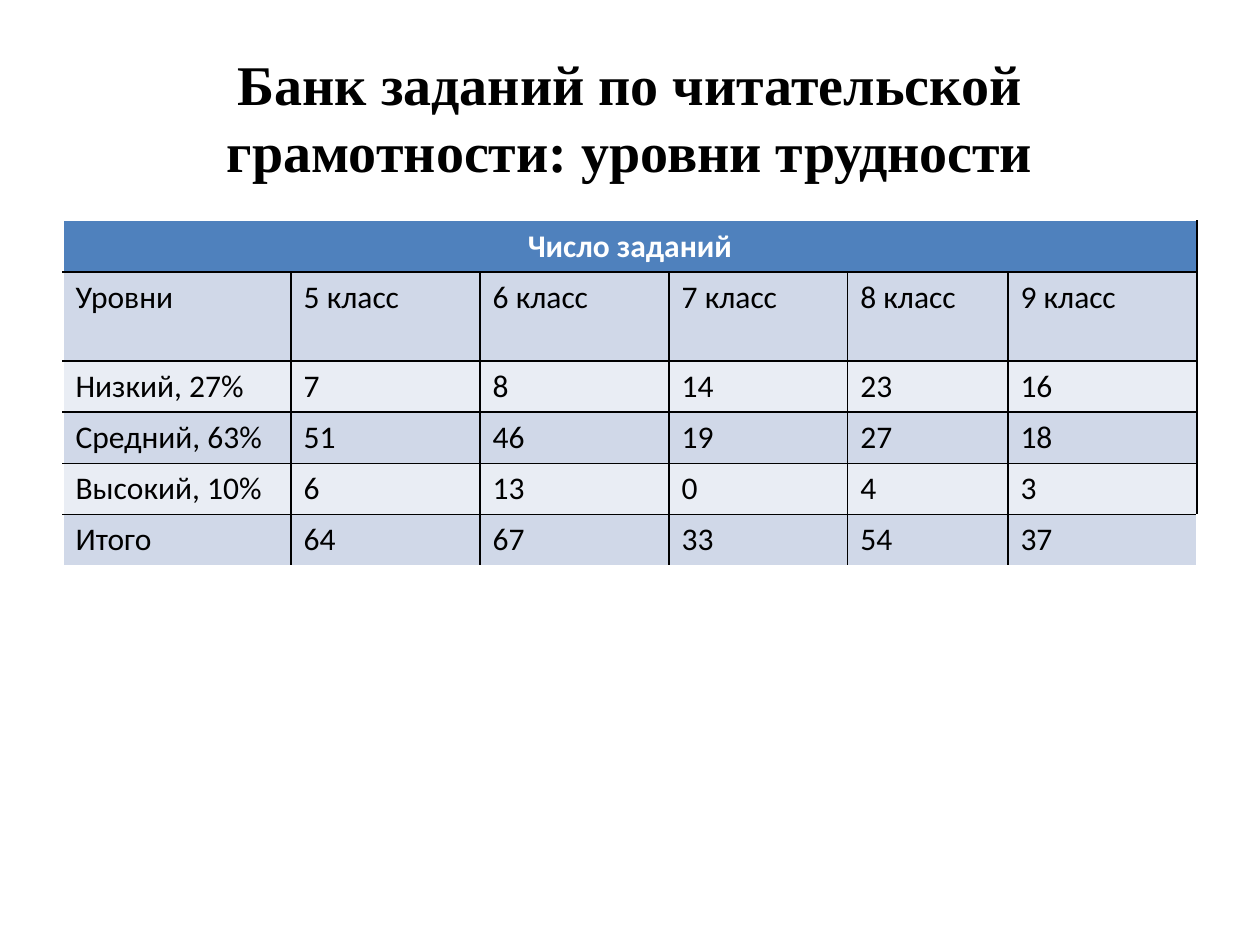
from lxml import etree
from pptx import Presentation, util as u
from pptx.dml.color import RGBColor
from pptx.enum import text
from pptx.oxml import ns

HUES = {"head": "4F81BD", "dark": "D0D8E8", "pale": "E9EDF4",
        "ink": "000000", "white": "FFFFFF"}
TITLE = "Банк заданий по читательской грамотности: уровни трудности"
ROWS = [
    ["Число заданий", "", "", "", "", ""],
    ["Уровни", "5 класс", "6 класс", "7 класс", "8 класс", "9 класс"],
    ["Низкий, 27%", "7", "8", "14", "23", "16"],
    ["Средний, 63%", "51", "46", "19", "27", "18"],
    ["Высокий, 10%", "6", "13", "0", "4", "3"],
    ["Итого", "64", "67", "33", "54", "37"],
]
WIDTHS = [4.6, 3.81, 3.81, 3.6, 3.23, 3.81]
HEIGHTS = [1.03, 1.8, 1.03, 1.03, 1.03, 1.03]


def hue(name):
    return RGBColor.from_string(HUES[name])


def style(par, face, size, ink, bold):
    for run in par.runs:
        run.font.name = face
        run.font.size = u.Pt(size)
        run.font.bold = bold
        run.font.color.rgb = hue(ink)


def edge(cell, side, ink):
    line = etree.SubElement(cell._tc.get_or_add_tcPr(), ns.qn("a:ln" + side),
                            w=str(u.Pt(1)))
    fill = etree.SubElement(line, ns.qn("a:solidFill"))
    etree.SubElement(fill, ns.qn("a:srgbClr"), val=HUES[ink])


def add_title(slide, left, top, wide, high):
    box = slide.shapes.title
    box.left, box.top, box.width, box.height = map(u.Cm, (left, top, wide, high))
    frame = box.text_frame
    frame.text = TITLE
    frame.vertical_anchor = text.MSO_ANCHOR.MIDDLE
    par = frame.paragraphs[0]
    par.alignment = text.PP_ALIGN.CENTER
    style(par, "Times New Roman", 32, "ink", True)


def add_grid(slide, left, top, wide, high):
    grid = slide.shapes.add_table(len(ROWS), len(WIDTHS), u.Cm(left), u.Cm(top),
                                  u.Cm(wide), u.Cm(high)).table
    for col, size in zip(grid.columns, WIDTHS):
        col.width = u.Cm(wide * size / sum(WIDTHS))
    for row, size in zip(grid.rows, HEIGHTS):
        row.height = u.Cm(high * size / sum(HEIGHTS))
    grid.cell(0, 0).merge(grid.cell(0, len(WIDTHS) - 1))
    last = len(ROWS) - 1
    for r, words in enumerate(ROWS):
        for c, word in enumerate(words):
            cell = grid.cell(r, c)
            end = r == last and c == len(WIDTHS) - 1
            edge(cell, "L", "white" if c == 0 else "ink")
            edge(cell, "R", "white" if end else "ink")
            edge(cell, "T", "white" if r == 0 else "ink")
            edge(cell, "B", "white" if r == last else "ink")
            cell.fill.solid()
            cell.fill.fore_color.rgb = hue("head" if r == 0 else
                                           "dark" if r % 2 else "pale")
            if word:
                cell.text_frame.text = word
                par = cell.text_frame.paragraphs[0]
                if r == 0:
                    par.alignment = text.PP_ALIGN.CENTER
                style(par, "Calibri", 18, "ink" if r else "white", r == 0)


def main():
    deck = Presentation()
    deck.slide_width, deck.slide_height = u.Cm(25.4), u.Cm(19.05)
    slide = deck.slides.add_slide(deck.slide_layouts[5])
    add_title(slide, 1.27, 0.76, 22.86, 3.18)
    add_grid(slide, 1.27, 4.45, sum(WIDTHS), sum(HEIGHTS))
    deck.save("out.pptx")


if __name__ == "__main__":
    main()
